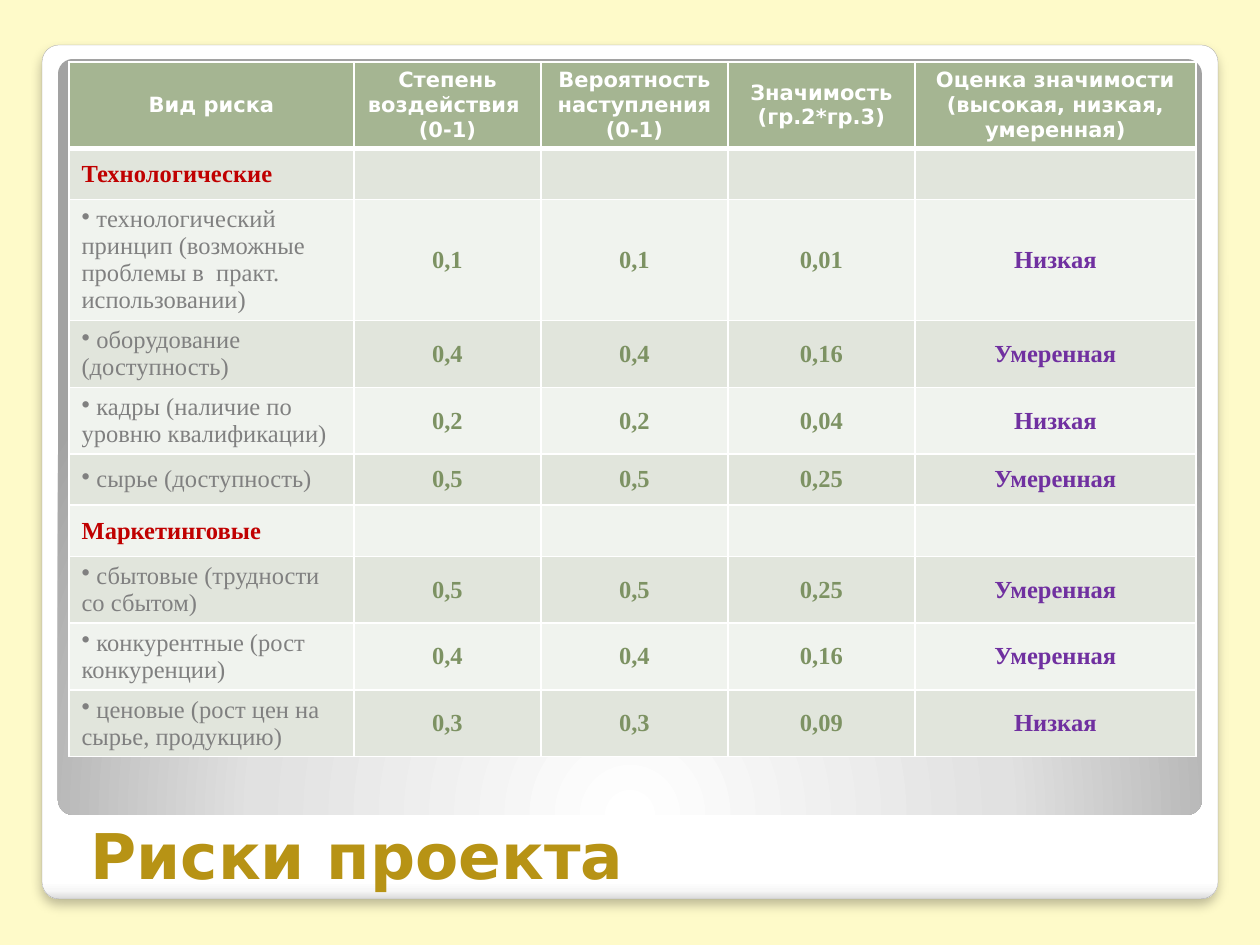
"""Build the project risk assessment slide."""
from dataclasses import dataclass

from lxml import etree
from pptx import Presentation
from pptx import util as u
from pptx.dml.color import RGBColor
from pptx.enum import shapes, text
from pptx.oxml import parse_xml
from pptx.oxml.ns import nsdecls, qn

SCALE = 914400 / 126
SANS, SERIF = "DejaVu Sans", "Times New Roman"
COLORS = {
    "page": "FEFAC9", "title": "B79315", "outline": "A4A4A4", "white": "FFFFFF",
    "header": "A5B592", "dark_band": "E1E5DC", "light_band": "F0F3EE",
    "group": "C00000", "risk": "808080", "number": "7D9263", "rating": "7030A0",
}
HEADERS = [
    "Вид риска",
    "Степень воздействия \n(0-1)",
    "Вероятность наступления (0-1)",
    "Значимость (гр.2*гр.3)",
    "Оценка значимости (высокая, низкая, умеренная)",
]
COLUMN_WIDTHS = [285, 187, 187, 187, 281]
ROW_HEIGHT = 51


@dataclass
class Panel:
    left: int
    top: int
    width: int
    height: int
    stops: list[tuple[int, str]]
    direction: str


@dataclass
class Risk:
    name: str
    impact: str = ""
    chance: str = ""
    weight: str = ""
    rating: str = ""


FRAME = Panel(42, 45, 1176, 854,
              [(0, "FFFFFF"), (98, "FFFFFF"), (99, "F7F7F7"), (100, "DADADA")],
              '<a:lin ang="5400000" scaled="0"/>')
BACKDROP = Panel(58, 59, 1144, 756,
                 [(0, "FFFFFF"), (55, "E1E1E1"), (100, "A2A2A2")],
                 '<a:path path="circle"><a:fillToRect l="50000" t="175000" '
                 'r="50000" b="-75000"/></a:path>')
RISKS = [
    Risk("Технологические"),
    Risk(" технологический принцип (возможные проблемы в  практ. использовании)",
         "0,1", "0,1", "0,01", "Низкая"),
    Risk(" оборудование (доступность)", "0,4", "0,4", "0,16", "Умеренная"),
    Risk(" кадры (наличие по уровню квалификации)", "0,2", "0,2", "0,04", "Низкая"),
    Risk(" сырье (доступность)", "0,5", "0,5", "0,25", "Умеренная"),
    Risk("Маркетинговые"),
    Risk(" сбытовые (трудности со сбытом)", "0,5", "0,5", "0,25", "Умеренная"),
    Risk(" конкурентные (рост конкуренции)", "0,4", "0,4", "0,16", "Умеренная"),
    Risk(" ценовые (рост цен на сырье, продукцию)", "0,3", "0,3", "0,09", "Низкая"),
]


def px(value: int) -> int:
    return u.Emu(round(value * SCALE))


def rgb(name: str) -> RGBColor:
    return RGBColor.from_string(COLORS[name])


def write(frame, content: str, *, size: int, font: str, color: str,
          bold: bool = True, centered: bool = False, bullet: bool = False) -> None:
    for index, line in enumerate(content.split("\n")):
        para = frame.add_paragraph() if index else frame.paragraphs[0]
        para.alignment = text.PP_ALIGN.CENTER if centered else text.PP_ALIGN.LEFT
        if bullet:
            etree.SubElement(para._p.get_or_add_pPr(), qn("a:buChar"), char="•")
        span = para.add_run()
        span.text = line
        span.font.size, span.font.name = u.Pt(size), font
        span.font.bold = bold
        span.font.color.rgb = rgb(color)


def draw_panel(page, panel: Panel):
    box = page.shapes.add_shape(shapes.MSO_SHAPE.ROUNDED_RECTANGLE, px(panel.left),
                                px(panel.top), px(panel.width), px(panel.height))
    box.adjustments[0] = 0.02
    box.shadow.inherit = False
    box.line.fill.background()
    stops = "".join(f'<a:gs pos="{pos * 1000}"><a:srgbClr val="{color}"/></a:gs>'
                    for pos, color in panel.stops)
    box.element.spPr.insert(2, parse_xml(
        f'<a:gradFill {nsdecls("a")} rotWithShape="1"><a:gsLst>{stops}</a:gsLst>'
        f'{panel.direction}</a:gradFill>'))
    return box


def draw_frame(page) -> None:
    box = draw_panel(page, FRAME)
    box.line.color.rgb = rgb("outline")
    box.line.width = u.Pt(0.16)
    box.element.spPr.find(qn("a:effectLst")).append(parse_xml(
        f'<a:outerShdw {nsdecls("a")} blurRad="{u.Pt(6)}" dist="{u.Pt(4)}" '
        'dir="5400000" algn="t" rotWithShape="0"><a:srgbClr val="000000">'
        '<a:alpha val="25000"/></a:srgbClr></a:outerShdw>'))


def draw_title(page) -> None:
    title = page.shapes.title
    page.shapes.element.append(title.element)
    title.left, title.top, title.width, title.height = map(px, (78, 810, 1128, 88))
    frame = title.text_frame
    frame.word_wrap = True
    frame.auto_size = text.MSO_AUTO_SIZE.NONE
    frame.vertical_anchor = text.MSO_ANCHOR.BOTTOM
    write(frame, "Риски проекта", size=36, font=SANS, color="title")


def style_cell(cell, fill: str, bottom: int = 1) -> None:
    cell.vertical_anchor = text.MSO_ANCHOR.MIDDLE
    cell.fill.solid()
    cell.fill.fore_color.rgb = rgb(fill)
    properties = cell._tc.get_or_add_tcPr()
    widths = {"L": 1, "R": 1, "T": 1, "B": bottom}
    for index, (side, width) in enumerate(widths.items()):
        properties.insert(index, parse_xml(
            f'<a:ln{side} {nsdecls("a")} w="{u.Pt(width)}"><a:solidFill>'
            f'<a:srgbClr val="{COLORS["white"]}"/></a:solidFill></a:ln{side}>'))


def write_risk(table, row: int, risk: Risk) -> None:
    for column in range(len(HEADERS)):
        style_cell(table.cell(row, column), "dark_band" if row % 2 else "light_band")
    detailed = bool(risk.rating)
    write(table.cell(row, 0).text_frame, risk.name, size=14, font=SERIF,
          color="risk" if detailed else "group", bold=not detailed, bullet=detailed)
    if detailed:
        values = [risk.impact, risk.chance, risk.weight, risk.rating]
        for column, value in enumerate(values, 1):
            write(table.cell(row, column).text_frame, value, size=14, font=SERIF,
                  color="rating" if column == 4 else "number", centered=True)


def draw_table(page) -> None:
    count = len(RISKS) + 1
    holder = page.shapes.add_table(count, len(HEADERS), px(69), px(62),
                                   px(sum(COLUMN_WIDTHS)), px(ROW_HEIGHT * count))
    table = holder.table
    for column, width in zip(table.columns, COLUMN_WIDTHS):
        column.width = px(width)
    for row in table.rows:
        row.height = px(ROW_HEIGHT)
    for column, heading in enumerate(HEADERS):
        cell = table.cell(0, column)
        style_cell(cell, "header", bottom=3)
        write(cell.text_frame, heading, size=12, font=SANS, color="white", centered=True)
    for row, risk in enumerate(RISKS, 1):
        write_risk(table, row, risk)
    holder.height = px(728)


def main() -> None:
    deck = Presentation()
    deck.slide_width, deck.slide_height = px(1260), px(945)
    page = deck.slides.add_slide(deck.slide_layouts[5])
    page.background.fill.solid()
    page.background.fill.fore_color.rgb = rgb("page")
    draw_frame(page)
    draw_panel(page, BACKDROP)
    draw_title(page)
    draw_table(page)
    deck.save("out.pptx")


if __name__ == "__main__":
    main()
